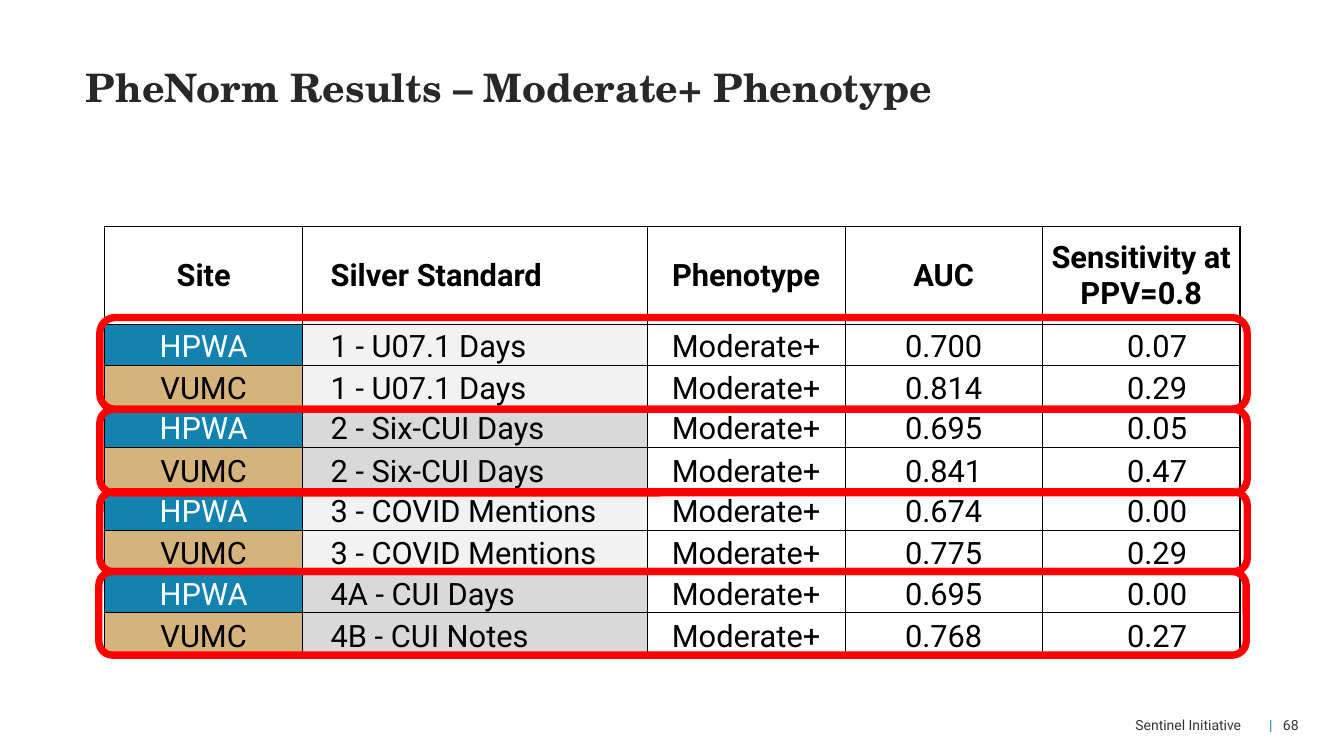
"""Build the PheNorm results slide for the Moderate+ phenotype."""
from lxml import etree
from pptx import Presentation
from pptx.dml import color
from pptx.enum import shapes, text
from pptx.oxml import ns
from pptx.util import Inches, Pt


def rgb(value):
    return color.RGBColor.from_string(value)


def add_run(paragraph, wording, size, hex_color, name="Roboto", bold=False):
    run = paragraph.add_run()
    run.text = wording
    formats = {"size": Pt(size), "name": name, "bold": bold}
    for key, value in formats.items():
        setattr(run.font, key, value)
    run.font.color.rgb = rgb(hex_color)


presentation = Presentation()
presentation.slide_width = Inches(13.33)
presentation.slide_height = Inches(7.5)
slide = presentation.slides.add_slide(presentation.slide_layouts[5])

title = slide.shapes.title
title_place = {"left": 0.85, "top": 0.4, "width": 12.21, "height": 0.7}
for key, value in title_place.items():
    setattr(title, key, Inches(value))
for side in ("left", "top", "right", "bottom"):
    setattr(title.text_frame, f"margin_{side}", 0)
title.text_frame.vertical_anchor = text.MSO_ANCHOR.BOTTOM
title.text_frame.paragraphs[0].alignment = text.PP_ALIGN.LEFT
add_run(title.text_frame.paragraphs[0], "PheNorm Results – Moderate+ Phenotype",
        28, "282828", "TeX Gyre Schola", True)

footers = [
    (12.31, 0.57, [("|   ", "007CBA"), ("68", "343434")]),
    (9.11, 3.2, [("Sentinel Initiative", "343434")]),
]
for left, width, runs in footers:
    footer = slide.shapes.add_textbox(Inches(left), Inches(7.01), Inches(width), Inches(0.37))
    frame_format = {
        "word_wrap": True,
        "vertical_anchor": text.MSO_ANCHOR.MIDDLE,
        "margin_left": Inches(0.1),
        "margin_top": Inches(0.1),
        "margin_right": 0,
        "margin_bottom": Inches(0.1),
    }
    for key, value in frame_format.items():
        setattr(footer.text_frame, key, value)
    paragraph = footer.text_frame.paragraphs[0]
    paragraph.alignment = text.PP_ALIGN.RIGHT
    for wording, hex_color in runs:
        add_run(paragraph, wording, 10, hex_color)

header = ["Site", "Silver Standard", "Phenotype", "AUC", "Sensitivity at PPV=0.8"]
results = [
    ("HPWA", "1 - U07.1 Days", "0.700", "0.07"),
    ("VUMC", "1 - U07.1 Days", "0.814", "0.29"),
    ("HPWA", "2 - Six-CUI Days", "0.695", "0.05"),
    ("VUMC", "2 - Six-CUI Days", "0.841", "0.47"),
    ("HPWA", "3 - COVID Mentions", "0.674", "0.00"),
    ("VUMC", "3 - COVID Mentions", "0.775", "0.29"),
    ("HPWA", "4A - CUI Days", "0.695", "0.00"),
    ("VUMC", "4B - CUI Notes", "0.768", "0.27"),
]
rows = [header] + [(site, standard, "Moderate+", auc, sensitivity)
                   for site, standard, auc, sensitivity in results]
site_fills = {"HPWA": "1382AF", "VUMC": "D4B37D"}
standard_fills = ["F2F2F2", "D9D9D9"]

table = slide.shapes.add_table(len(rows), len(header), Inches(1.04), Inches(2.25),
                               Inches(11.25), Inches(4.25)).table
table.first_row = table.horz_banding = False
for column, width in zip(table.columns, [1.96, 3.42, 1.96, 1.96, 1.96]):
    column.width = Inches(width)
for row, height in zip(table.rows, [0.97] + [0.4, 0.42] * 4):
    row.height = Inches(height)

last_column = len(header) - 1
for row_index, values in enumerate(rows):
    is_header = row_index == 0
    for column_index, wording in enumerate(values):
        cell = table.cell(row_index, column_index)
        indent, alignment = 0.01, text.PP_ALIGN.CENTER
        if column_index == 1:
            indent, alignment = 0.28, text.PP_ALIGN.LEFT
        elif column_index == last_column and not is_header:
            indent, alignment = 0.84, text.PP_ALIGN.LEFT
        cell_format = {
            "margin_left": Inches(indent),
            "margin_top": Inches(0.01),
            "margin_right": Inches(0.01),
            "margin_bottom": 0,
            "vertical_anchor": text.MSO_ANCHOR.MIDDLE if is_header else text.MSO_ANCHOR.BOTTOM,
        }
        for key, value in cell_format.items():
            setattr(cell, key, value)

        thick_edges = {
            "lnL": column_index == 0,
            "lnR": column_index == last_column,
            "lnT": is_header or row_index % 2 == 1,
            "lnB": row_index % 2 == 0,
        }
        properties = cell._tc.get_or_add_tcPr()
        for edge, thick in thick_edges.items():
            line = etree.SubElement(properties, ns.qn(f"a:{edge}"), w=str(Pt(1 if thick else 0.5)))
            solid = etree.SubElement(line, ns.qn("a:solidFill"))
            etree.SubElement(solid, ns.qn("a:srgbClr"), val="000000")

        if is_header or column_index > 1:
            cell.fill.background()
        else:
            cell.fill.solid()
            pair = (row_index - 1) // 2
            cell.fill.fore_color.rgb = rgb(
                site_fills[wording] if column_index == 0 else standard_fills[pair % 2])
        paragraph = cell.text_frame.paragraphs[0]
        paragraph.alignment = alignment
        add_run(paragraph, wording, 22, "FFFFFF" if wording == "HPWA" else "000000",
                bold=is_header)

for left, top, height in [(0.99, 3.15, 0.91), (0.99, 4.06, 0.83),
                          (0.99, 4.88, 0.79), (0.98, 5.67, 0.83)]:
    frame = slide.shapes.add_shape(shapes.MSO_SHAPE.ROUNDED_RECTANGLE, Inches(left), Inches(top),
                                   Inches(11.38), Inches(height))
    frame.shadow.inherit = False
    frame.fill.background()
    frame.line.color.rgb = rgb("FF0000")
    frame.line.width = Pt(5.25)

presentation.save("out.pptx")
